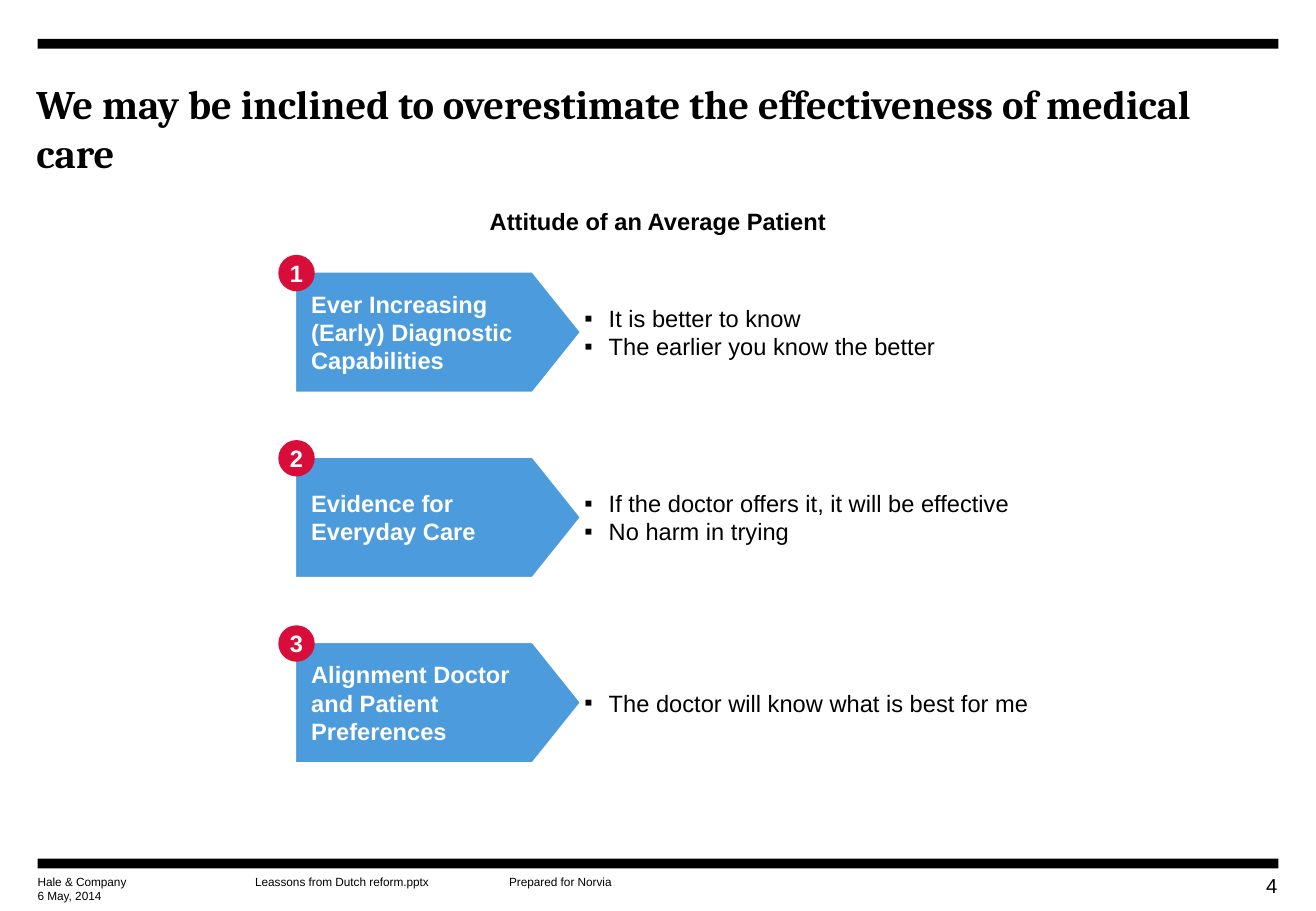
from lxml.etree import SubElement
from pptx import Presentation
from pptx.dml.color import RGBColor
from pptx.enum.shapes import MSO_SHAPE
from pptx.enum.text import MSO_ANCHOR, PP_ALIGN
from pptx.oxml.ns import qn
from pptx.util import Inches, Pt

WIDE, HIGH = Inches(10.83), Inches(7.5)
COLORS = {"ink": "000000", "paper": "FFFFFF", "arrow": "4C9BDC", "badge": "D90D39"}
STYLES = {
    "title": {"name": "Cambria", "size": Pt(24), "bold": True},
    "head": {"name": "Arial", "size": Pt(14), "bold": True},
    "body": {"name": "Arial", "size": Pt(14), "bold": False},
    "page": {"name": "Arial", "size": Pt(12), "bold": False},
    "foot": {"name": "Arial", "size": Pt(7), "bold": False},
}
ROWS = [
    ("Ever Increasing (Early) Diagnostic Capabilities",
     ["It is better to know", "The earlier you know the better"]),
    ("Evidence for \nEveryday Care",
     ["If the doctor offers it, it will be effective", "No harm in trying"]),
    ("Alignment Doctor and Patient Preferences",
     ["The doctor will know what is best for me"]),
]
EDGE, SPAN = 2.86, 94.28
ROW_TOP, ROW_STEP = 29.73, 20.33


def scale(box):
    """Turn percent shares of the slide into lengths."""
    x, y, w, h = box
    return [int(part * side / 100) for part, side in
            ((x, WIDE), (y, HIGH), (w, WIDE), (h, HIGH))]


def write(shape, lines, style, color="ink", align=PP_ALIGN.LEFT,
          anchor=MSO_ANCHOR.TOP, wrap=True, left=0, right=0):
    frame = shape.text_frame
    form = {"word_wrap": wrap, "vertical_anchor": anchor, "margin_top": 0,
            "margin_bottom": 0, "margin_left": Inches(left),
            "margin_right": Inches(right)}
    for key, value in form.items():
        setattr(frame, key, value)
    for i, line in enumerate(lines):
        para = frame.add_paragraph() if i else frame.paragraphs[0]
        para.text, para.alignment = line, align
        for run in para.runs:
            for key, value in STYLES[style].items():
                setattr(run.font, key, value)
            run.font.color.rgb = RGBColor.from_string(COLORS[color])
    return frame


def add_text(slide, box, lines, style, **form):
    return write(slide.shapes.add_textbox(*scale(box)), lines, style, **form)


def add_form(slide, kind, box, color):
    shape = slide.shapes.add_shape(kind, *scale(box))
    shape.shadow.inherit = False
    shape.fill.solid()
    shape.fill.fore_color.rgb = RGBColor.from_string(COLORS[color])
    shape.line.fill.background()
    return shape


def add_bullets(frame):
    for para in frame.paragraphs:
        props = para._p.get_or_add_pPr()
        props.set("marL", str(Inches(0.2)))
        props.set("indent", str(-Inches(0.2)))
        SubElement(props, qn("a:buFont")).set("typeface", "Arial")
        SubElement(props, qn("a:buChar")).set("char", "▪")


def add_header(slide, box):
    x, y, w, h = box
    add_form(slide, MSO_SHAPE.RECTANGLE, (x, y, w, 1.07), "ink")
    add_text(slide, (x - 0.09, y + 4.4, w, 10.4),
             ["We may be inclined to overestimate the effectiveness of medical care"],
             "title")
    add_text(slide, (x, y + 18.4, w, 3.2), ["Attitude of an Average Patient"],
             "head", align=PP_ALIGN.CENTER)


def add_row(slide, box, number, label, points):
    x, y, w, h = box
    arrow = add_form(slide, MSO_SHAPE.PENTAGON, (x, y, 21.88, h), "arrow")
    arrow.adjustments[0] = 0.4
    arrow.line.color.rgb = RGBColor.from_string(COLORS["paper"])
    arrow.line.width = Pt(2.25)
    write(arrow, [label], "head", "paper", anchor=MSO_ANCHOR.MIDDLE,
          left=0.14, right=0.02)
    badge = add_form(slide, MSO_SHAPE.OVAL, (x - 1.2, y - 1.75, 2.77, 4), "badge")
    write(badge, [str(number)], "head", "paper", PP_ALIGN.CENTER,
          MSO_ANCHOR.MIDDLE, wrap=False)
    add_bullets(add_text(slide, (x + 22.06, y, w - 22.06, h), points, "body",
                         anchor=MSO_ANCHOR.MIDDLE))


def add_footer(slide, box):
    x, y, w, h = box
    add_form(slide, MSO_SHAPE.RECTANGLE, (x, y, w, 1.07), "ink")
    notes = [(0, 1.73, "Hale & Company"), (0, 3.3, "6 May, 2014"),
             (16.53, 1.73, "Leassons from Dutch reform.pptx"),
             (35.83, 1.73, "Prepared for Norvia")]
    for dx, dy, note in notes:
        add_text(slide, (x + dx, y + dy, 17, 1.6), [note], "foot", wrap=False)
    add_text(slide, (x + w - 5.54, y + 1.6, 5.45, 2.67), ["4"], "page",
             align=PP_ALIGN.RIGHT)


def main():
    deck = Presentation()
    deck.slide_width, deck.slide_height = WIDE, HIGH
    slide = deck.slides.add_slide(deck.slide_layouts[6])
    add_header(slide, (EDGE, 4.27, SPAN, 21.6))
    for i, (label, points) in enumerate(ROWS):
        add_row(slide, (22.35, ROW_TOP + i * ROW_STEP, 56.41, 13.47),
                i + 1, label, points)
    add_footer(slide, (EDGE, 94.27, SPAN, 5))
    deck.save("out.pptx")


if __name__ == "__main__":
    main()
